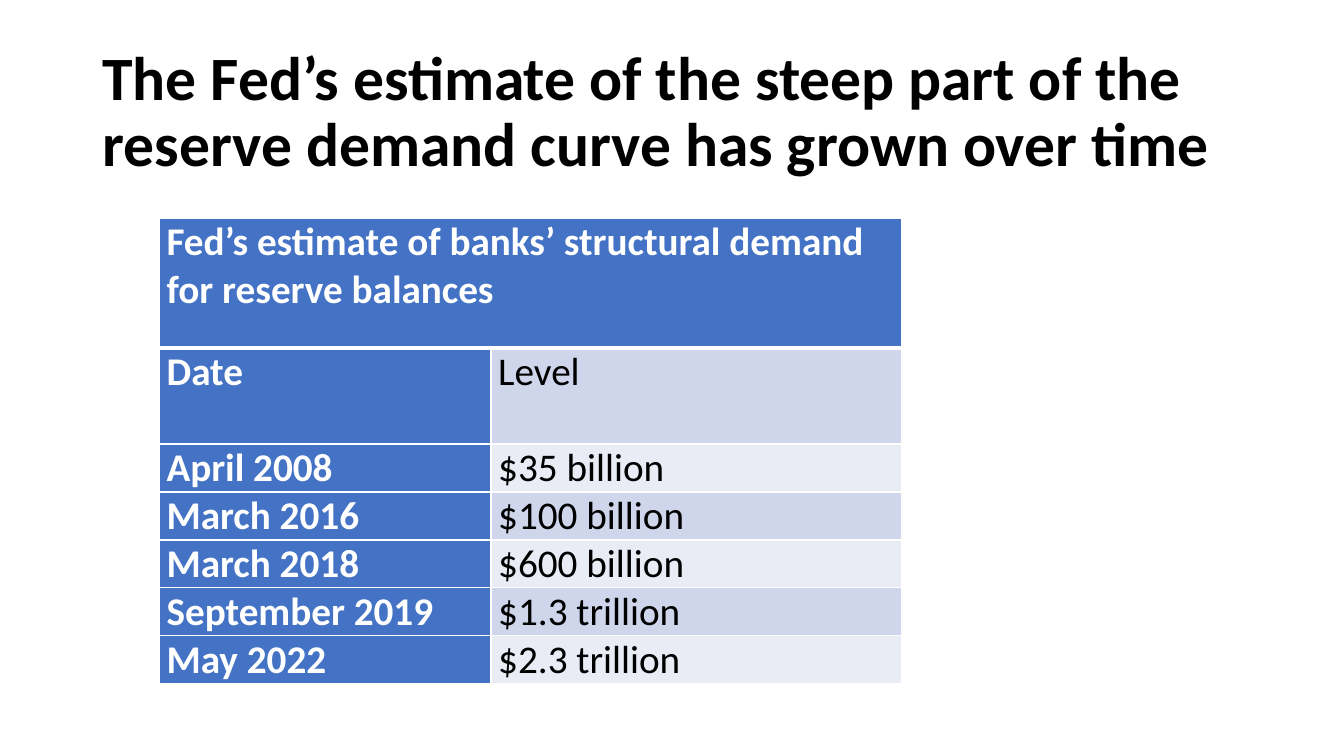
from lxml import etree
from pptx import Presentation
from pptx.dml.color import RGBColor
from pptx.enum.text import MSO_ANCHOR, MSO_AUTO_SIZE, PP_ALIGN
from pptx.util import Pt

LEFT, MIDDLE, NO_FIT = PP_ALIGN.LEFT, MSO_ANCHOR.MIDDLE, MSO_AUTO_SIZE.NONE
BLUE, WHITE, BLACK = "4472C4", "FFFFFF", "000000"
BANDS = ["CFD5EA", "E9EBF5"]
NS = "http://schemas.openxmlformats.org/drawingml/2006/main"


def write(tf, text, size, color, bold):
    p = tf.paragraphs[0]
    p.alignment = LEFT
    r = p.add_run()
    r.text = text
    r.font.color.rgb = RGBColor.from_string(color)
    for name, value in {"name": "Calibri", "size": Pt(size), "bold": bold}.items():
        setattr(r.font, name, value)
    return p


def style_cell(cell, fill, bottom):
    for name, value in {"margin_left": 5.2, "margin_right": 5.2,
                        "margin_top": 0, "margin_bottom": 0}.items():
        setattr(cell, name, Pt(value))
    tc_pr = cell._tc.get_or_add_tcPr()
    for side, width in {"L": 1, "R": 1, "T": 1, "B": bottom}.items():
        ln = etree.SubElement(tc_pr, f"{{{NS}}}ln{side}", w=str(Pt(width)))
        line_fill = etree.SubElement(ln, f"{{{NS}}}solidFill")
        etree.SubElement(line_fill, f"{{{NS}}}srgbClr", val=WHITE)
    cell.fill.solid()
    cell.fill.fore_color.rgb = RGBColor.from_string(fill)


prs = Presentation()
prs.slide_width, prs.slide_height = Pt(960), Pt(540)
s = prs.slides.add_slide(prs.slide_layouts[5])

# Title
title = s.shapes.title
for name, value in {"left": 66, "top": 28.8, "width": 828, "height": 104.4}.items():
    setattr(title, name, Pt(value))
tf = title.text_frame
for name, value in {"word_wrap": True, "auto_size": NO_FIT,
                    "vertical_anchor": MIDDLE}.items():
    setattr(tf, name, value)
p = write(tf, "The Fed’s estimate of the steep part of the reserve demand curve "
          "has grown over time", 44, BLACK, True)
p.line_spacing = 0.9

# Table of demand estimates
rows = [
    ("Fed’s estimate of banks’ structural demand for reserve balances", ""),
    ("Date", "Level"),
    ("April 2008", "$35 billion"),
    ("March 2016", "$100 billion"),
    ("March 2018", "$600 billion"),
    ("September 2019", "$1.3 trillion"),
    ("May 2022", "$2.3 trillion"),
]
heights = [92.6, 68.4] + [34.2] * 5
widths = [236.9, 293]
table = s.shapes.add_table(len(rows), 2, Pt(113.8), Pt(156.2),
                           Pt(sum(widths)), Pt(sum(heights))).table
for col, width in zip(table.columns, widths):
    col.width = Pt(width)
table.cell(0, 0).merge(table.cell(0, 1))
for i, texts in enumerate(rows):
    table.rows[i].height = Pt(heights[i])
    for j, text in enumerate(texts):
        cell = table.cell(i, j)
        head = i == 0 or j == 0
        style_cell(cell, BLUE if head else BANDS[(i - 1) % 2], 3 if i == 0 else 1)
        if text:
            write(cell.text_frame, text, 28, WHITE if head else BLACK, head)

prs.save("out.pptx")
